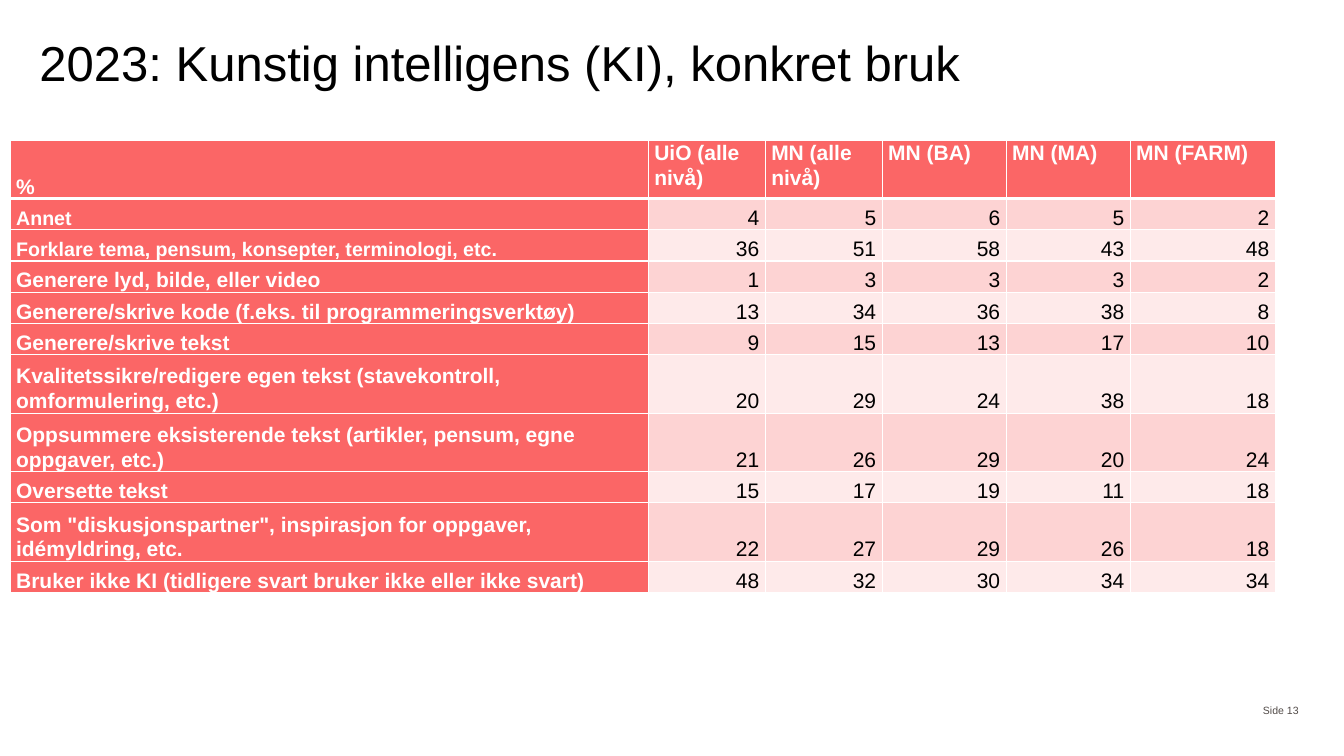
from dataclasses import dataclass

from lxml import etree
from pptx import Presentation
from pptx import util as u
from pptx.dml.color import RGBColor
from pptx.enum import text
from pptx.oxml.ns import qn

LEFT, RIGHT = text.PP_ALIGN.LEFT, text.PP_ALIGN.RIGHT
TOP, MIDDLE, BOTTOM = text.MSO_ANCHOR.TOP, text.MSO_ANCHOR.MIDDLE, text.MSO_ANCHOR.BOTTOM

COLUMNS = [("%", 6.33), ("UiO (alle nivå)", 1.16), ("MN (alle nivå)", 1.16),
           ("MN (BA)", 1.23), ("MN (MA)", 1.23), ("MN (FARM)", 1.44)]
USES = [
    ("Annet", 4, 5, 6, 5, 2),
    ("Forklare tema, pensum, konsepter, terminologi, etc.", 36, 51, 58, 43, 48),
    ("Generere lyd, bilde, eller video", 1, 3, 3, 3, 2),
    ("Generere/skrive kode (f.eks. til programmeringsverktøy)", 13, 34, 36, 38, 8),
    ("Generere/skrive tekst", 9, 15, 13, 17, 10),
    ("Kvalitetssikre/redigere egen tekst (stavekontroll, omformulering, etc.)",
     20, 29, 24, 38, 18),
    ("Oppsummere eksisterende tekst (artikler, pensum, egne oppgaver, etc.)",
     21, 26, 29, 20, 24),
    ("Oversette tekst", 15, 17, 19, 11, 18),
    ('Som "diskusjonspartner", inspirasjon for oppgaver, idémyldring, etc.',
     22, 27, 29, 26, 18),
    ("Bruker ikke KI (tidligere svart bruker ikke eller ikke svart)",
     48, 32, 30, 34, 34),
]
TALL_ROWS = {0, 6, 7, 9}
SMALL_ROWS = {1, 2}


@dataclass(frozen=True)
class Theme:
    """Colours and type sizes of the slide."""
    font: str = "Arial"
    ink: str = "000000"
    muted: str = "524B48"
    white: str = "FFFFFF"
    red: str = "FB6666"
    bands: tuple = ("FEEAEA", "FDD3D3")
    title: float = 35
    body: float = 15
    label: float = 14
    footer: float = 7.5


def write(tf, content, *, font, size, color, bold=False, align=LEFT, anchor=TOP,
          line=None, before=0, after=0):
    """Put one formatted paragraph in a text frame."""
    tf.word_wrap = True
    tf.vertical_anchor = anchor
    p = tf.paragraphs[0]
    p.alignment = align
    p.line_spacing = line
    p.space_before, p.space_after = u.Pt(before), u.Pt(after)
    r = p.add_run()
    r.text = content
    r.font.name, r.font.size, r.font.bold = font, u.Pt(size), bold
    r.font.color.rgb = RGBColor.from_string(color)


class Deck:
    """Hold the theme and the current slide."""

    def __init__(self, theme):
        """Open a wide presentation with one blank slide."""
        self.theme = theme
        self.prs = Presentation()
        self.prs.slide_width, self.prs.slide_height = u.Inches(13.33), u.Inches(7.5)
        self.s = self.prs.slides.add_slide(self.prs.slide_layouts[6])

    def text(self, content, box, inset=None, **style):
        """Add a text box."""
        tf = self.s.shapes.add_textbox(*map(u.Inches, box)).text_frame
        if inset is not None:
            tf.margin_left = tf.margin_right = u.Inches(inset)
            tf.margin_top = tf.margin_bottom = u.Inches(inset)
        write(tf, content, font=self.theme.font, **style)

    def borders(self, cell, **widths):
        """Draw the four borders of a cell in white."""
        tc_pr = cell._tc.get_or_add_tcPr()
        for i, side in enumerate("LRTB"):
            ln = etree.Element(qn(f"a:ln{side}"), w=str(u.Pt(widths.get(side, 1))))
            fill = etree.SubElement(ln, qn("a:solidFill"))
            etree.SubElement(fill, qn("a:srgbClr"), val=self.theme.white)
            tc_pr.insert(i, ln)

    def cell(self, cell, content, fill, **style):
        """Fill and write one table cell."""
        cell.margin_left = cell.margin_right = u.Inches(0.06)
        cell.margin_top = cell.margin_bottom = 0
        cell.fill.solid()
        cell.fill.fore_color.rgb = RGBColor.from_string(fill)
        anchor = style.pop("anchor", BOTTOM)
        write(cell.text_frame, content, font=self.theme.font, line=1.07, after=8, **style)
        cell.vertical_anchor = anchor

    def table(self, columns, body, left, top):
        """Add the table with a red header row and label column."""
        t = self.theme
        rows = [[name for name, _ in columns], *body]
        widths = [u.Inches(w) for _, w in columns]
        heights = [u.Inches(0.58 if i in TALL_ROWS else 0.31) for i in range(len(rows))]
        table = self.s.shapes.add_table(len(rows), len(columns), u.Inches(left),
                                        u.Inches(top), sum(widths), sum(heights)).table
        for column, width in zip(table.columns, widths):
            column.width = width
        for i, values in enumerate(rows):
            table.rows[i].height = heights[i]
            for j, value in enumerate(values):
                cell = table.cell(i, j)
                if i and j:
                    self.cell(cell, str(value), t.bands[i % 2], size=t.body,
                              color=t.ink, align=RIGHT)
                else:
                    self.cell(cell, value, t.red, color=t.white, bold=True,
                              size=t.label if i in SMALL_ROWS else t.body,
                              anchor=TOP if j else BOTTOM)
                self.borders(cell, T=3 if i == 1 else 1, B=3 if i == 0 else 1)


def main():
    """Build and save the slide."""
    theme = Theme()
    deck = Deck(theme)
    deck.text("Side 13", (12.32, 6.85, 0.66, 0.4), size=theme.footer,
              color=theme.muted, align=RIGHT, anchor=MIDDLE, after=6)
    deck.text("2023: Kunstig intelligens (KI), konkret bruk", (0.39, 0.39, 12.55, 0.59),
              inset=0, size=theme.title, color=theme.ink, line=0.9)
    deck.table(COLUMNS, USES, 0.1, 1.39)
    deck.prs.save("out.pptx")


if __name__ == "__main__":
    main()
